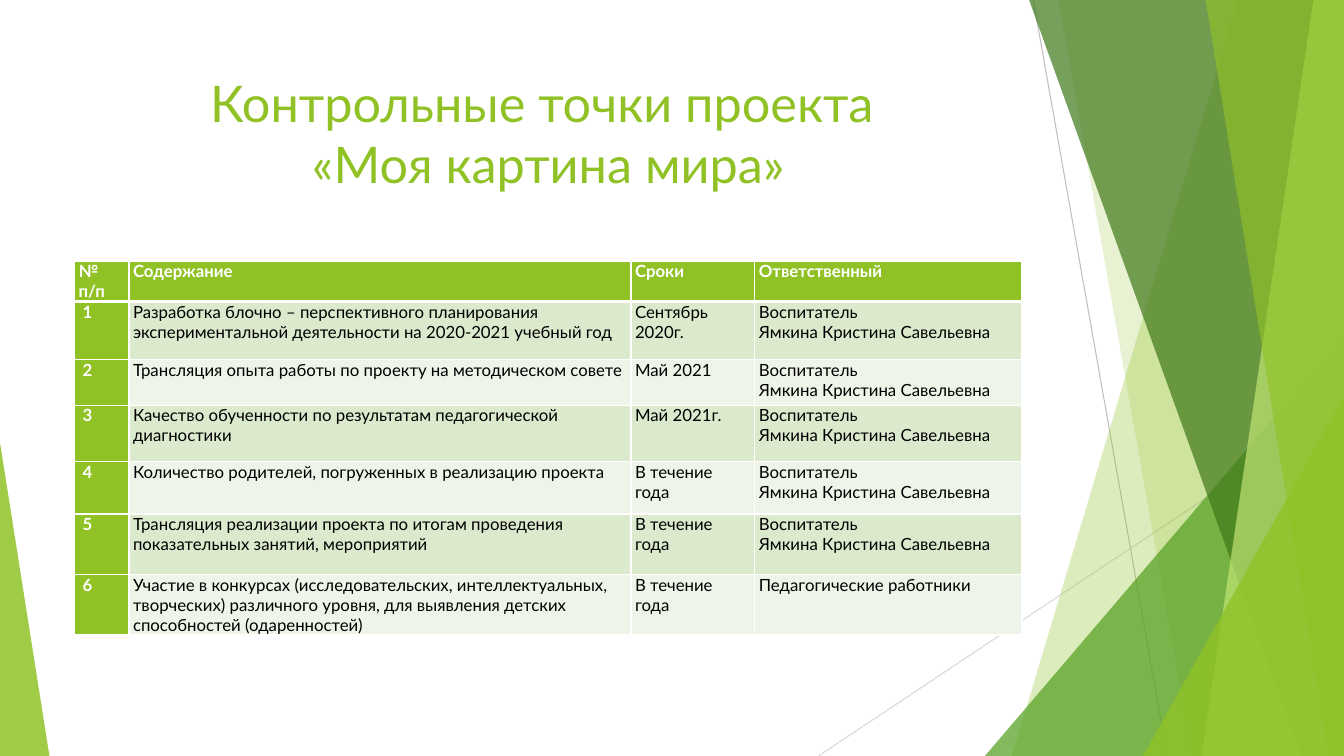
"""Build the slide with the project's control points."""
from lxml.etree import SubElement as Sub
from pptx import Presentation
from pptx.dml.color import RGBColor
from pptx.enum.shapes import MSO_CONNECTOR as Link, MSO_SHAPE as Shape
from pptx.enum.text import MSO_ANCHOR as Anchor, PP_ALIGN as Align
from pptx.oxml.ns import qn
from pptx.util import Inches, Pt

WIDE, HIGH = Inches(13.33), Inches(7.5)
FONT = "Lato"
GREEN, WHITE, BLACK = "90C226", "FFFFFF", "000000"
TINTS = ("EEF4E8", "DBE9CD")
LEFT, SPAN = 5.55, 70.5

COLS = (4.05, 37.35, 9.22, 19.88)
ROWS = (5.2, 7.73, 6, 7.47, 6.93, 8, 8)
HEAD = ("№ п/п", "Содержание", "Сроки", "Ответственный")
TUTOR = "Воспитатель\nЯмкина Кристина Савельевна"
YEAR = "В течение года"
POINTS = (
    ("Разработка блочно – перспективного планирования экспериментальной "
     "деятельности на 2020-2021 учебный год", "Сентябрь 2020г.", TUTOR),
    ("Трансляция опыта работы по проекту на методическом совете",
     "Май 2021", TUTOR),
    ("Качество обученности по результатам педагогической диагностики",
     "Май 2021г.", TUTOR),
    ("Количество родителей, погруженных в реализацию проекта", YEAR, TUTOR),
    ("Трансляция реализации проекта по итогам проведения показательных "
     "занятий, мероприятий", YEAR, TUTOR),
    ("Участие в конкурсах (исследовательских, интеллектуальных, творческих) "
     "различного уровня, для выявления детских способностей (одаренностей)",
     YEAR, "Педагогические работники"),
)


def px(share):
    """Turn a percentage of the slide's width into a length."""
    return round(WIDE * share / 100)


def py(share):
    """Turn a percentage of the slide's height into a length."""
    return round(HIGH * share / 100)


def rgb(code):
    """Turn a hex string into a colour."""
    return RGBColor.from_string(code)


def style(para, size, color, bold=False):
    """Set the font of a paragraph."""
    font = para.font
    font.name, font.size, font.bold = FONT, Pt(size), bold
    font.color.rgb = rgb(color)


def paint(shape, color, alpha):
    """Give a shape a see-through fill and no outline."""
    shape.shadow.inherit = False
    shape.fill.solid()
    shape.fill.fore_color.rgb = rgb(color)
    shape.line.fill.background()
    tint = shape.element.spPr.find(qn("a:solidFill"))[0]
    Sub(tint, qn("a:alpha"), val=str(alpha * 1000))


def add_line(slide, start, end, color):
    """Draw a thin straight line."""
    line = slide.shapes.add_connector(
        Link.STRAIGHT, px(start[0]), py(start[1]), px(end[0]), py(end[1]))
    line.line.color.rgb = rgb(color)
    line.line.width = Pt(0.75)
    Sub(line.element.spPr, qn("a:effectLst"))


def add_band(slide, top, foot, color, alpha):
    """Draw a full-height band that runs to the right edge."""
    pen = slide.shapes.build_freeform(px(top), 0)
    pen.add_line_segments([(WIDE, 0), (WIDE, HIGH), (px(foot), HIGH)])
    paint(pen.convert_to_shape(), color, alpha)


def add_peak(slide, left, top, width, tip, color, alpha):
    """Draw a triangle that stands on the bottom edge."""
    peak = slide.shapes.add_shape(Shape.ISOSCELES_TRIANGLE, px(left), py(top),
                                  px(width), py(100 - top))
    peak.adjustments[0] = tip
    paint(peak, color, alpha)


def add_decor(slide):
    """Draw the green facets on both sides."""
    add_line(slide, (76.88, 0), (86.85, 100), "BFBFBF")
    add_line(slide, (100, 53.73), (60.9, 100), "D9D9D9")
    add_band(slide, 92.1, 75.3, GREEN, 30)
    add_band(slide, 78.75, 88.72, GREEN, 20)
    add_peak(slide, 73.28, 44.4, 26.72, 1, "54A021", 72)
    add_band(slide, 76.57, 96.82, "3F7819", 70)
    add_band(slide, 97.72, 89.4, "C0E474", 70)
    add_band(slide, 89.7, 98.85, GREEN, 65)
    add_peak(slide, 85.05, 52.4, 14.95, 1, GREEN, 80)
    add_peak(slide, 0, 58.53, 3.68, 0, GREEN, 85)


def add_title(slide, text):
    """Write the centred title."""
    box = slide.shapes.add_textbox(px(LEFT), py(8.93), px(SPAN), py(19.2))
    frame = box.text_frame
    frame.word_wrap = True
    frame.vertical_anchor = Anchor.TOP
    para = frame.paragraphs[0]
    para.text = text
    para.alignment = Align.CENTER
    style(para, 36, GREEN)


def add_edges(cell, foot):
    """Draw white cell borders with the given bottom width."""
    props = cell._tc.get_or_add_tcPr()
    for side, width in (("L", 1), ("R", 1), ("T", 1), ("B", foot)):
        edge = Sub(props, qn(f"a:ln{side}"), w=str(Pt(width)))
        Sub(Sub(edge, qn("a:solidFill")), qn("a:srgbClr"), val=WHITE)


def fill_cell(cell, text, row, col):
    """Write and colour one cell."""
    key = row == 0 or col == 0
    add_edges(cell, 1 if row else 3)
    cell.fill.solid()
    cell.fill.fore_color.rgb = rgb(GREEN if key else TINTS[row % 2])
    cell.margin_left = Inches(0.08 if row and col == 0 else 0.04)
    cell.margin_right = Inches(0.04)
    cell.margin_top = cell.margin_bottom = 0
    cell.text = text
    for para in cell.text_frame.paragraphs:
        style(para, 12, WHITE if key else BLACK, key)


def add_grid(slide):
    """Build the table of control points."""
    grid = slide.shapes.add_table(len(ROWS), len(COLS), px(LEFT), py(34.53),
                                  px(SPAN), py(sum(ROWS))).table
    for col, share in zip(grid.columns, COLS):
        col.width = px(share)
    for row, share in zip(grid.rows, ROWS):
        row.height = py(share)
    lines = [HEAD] + [(str(n), *point) for n, point in enumerate(POINTS, 1)]
    for row, line in enumerate(lines):
        for col, text in enumerate(line):
            fill_cell(grid.cell(row, col), text, row, col)


def main():
    """Build and save the slide."""
    deck = Presentation()
    deck.slide_width, deck.slide_height = WIDE, HIGH
    slide = deck.slides.add_slide(deck.slide_layouts[6])
    add_decor(slide)
    add_title(slide, "Контрольные точки проекта \v«Моя картина мира»")
    add_grid(slide)
    deck.save("out.pptx")


if __name__ == "__main__":
    main()
